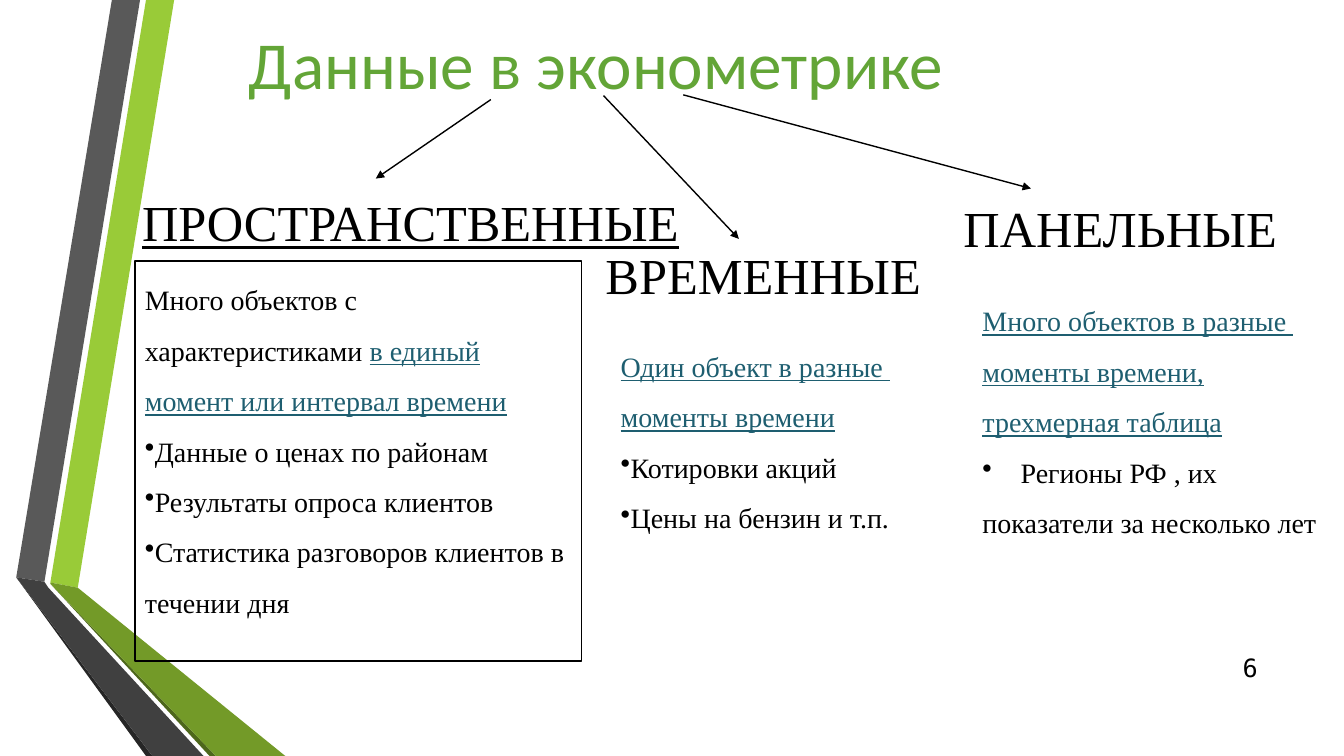
import pptx
import pptx.dml.color
import pptx.enum.shapes
import pptx.enum.text
import pptx.oxml
import pptx.oxml.ns
import pptx.util
from pptx.util import Cm

PP_ALIGN = pptx.enum.text.PP_ALIGN
ANCHOR = pptx.enum.text.MSO_ANCHOR
AUTO_SIZE = pptx.enum.text.MSO_AUTO_SIZE

BLACK = "000000"
HEADING = {"size": 36, "name": "Times New Roman", "color": BLACK}
BODY = {"size": 20, "name": "Times New Roman", "color": BLACK}
ACCENT = {**BODY, "color": "1E5E70", "underline": True}
TITLE = {"size": 48, "name": "Calibri", "color": "63A537"}
NUMBER = {"size": 18, "name": "DejaVu Sans Mono", "color": BLACK}

# Ribbon facets: fill and corner points in centimetres
RIBBONS = [
    ("99CB38", [(1.27, 14.68), (1.96, 14.81), (4.39, 0), (3.68, 0)]),
    ("595959", [(3.53, 0), (2.82, 0), (0.41, 14.55), (1.12, 14.66)]),
    ("262626", [(0.41, 14.55), (3.68, 19.05), (3.84, 19.05)]),
    ("4D671B", [(1.27, 14.71), (5.28, 19.05), (5.44, 19.05)]),
    ("739A28", [(1.27, 14.71), (5.44, 19.05), (7.19, 19.05), (1.96, 14.81), (1.27, 14.68)]),
    ("404040", [(5.13, 19.05), (1.22, 14.81), (1.12, 14.66), (0.41, 14.55), (3.84, 19.05)]),
]

ARROWS = [
    (12.37, 2.51, 9.47, 4.5),
    (15.21, 2.41, 18.62, 6.02),
    (17.22, 2.39, 25.98, 4.75),
]

HEADINGS = [
    ("ПРОСТРАНСТВЕННЫЕ", (3.33, 4.7, 14.17, 1.8), {**HEADING, "underline": True}),
    ("ВРЕМЕННЫЕ", (15.01, 6.02, 8.46, 1.8), HEADING),
    ("ПАНЕЛЬНЫЕ", (24.03, 4.85, 8.48, 1.8), HEADING),
]

# Each paragraph: runs, bullet flag, hanging indent in centimetres
SPATIAL = [
    ([("Много объектов с характеристиками ", BODY),
      ("в единый момент или интервал времени", ACCENT)], False, 0),
    ([("Данные о ценах по районам", BODY)], True, 0),
    ([("Результаты опроса клиентов", BODY)], True, 0),
    ([("Статистика разговоров клиентов в течении дня", BODY)], True, 0),
]
TEMPORAL = [
    ([("Один объект в разные ", ACCENT)], False, 0),
    ([("моменты времени", ACCENT)], False, 0),
    ([("Котировки акций", BODY)], True, 0),
    ([("Цены на бензин и т.п.", BODY)], True, 0),
]
PANEL = [
    ([("Много объектов в разные ", ACCENT)], False, 0),
    ([("моменты времени, трехмерная таблица", ACCENT)], False, 0),
    ([("Регионы РФ , их", BODY)], True, 0.96),
    ([("показатели за несколько лет", BODY)], False, 0),
]


def rgb(value):
    return pptx.dml.color.RGBColor.from_string(value)


def add_run(paragraph, text, style):
    run = paragraph.add_run()
    run.text = text
    for key, value in style.items():
        if key == "color":
            run.font.color.rgb = rgb(value)
        else:
            setattr(run.font, key, pptx.util.Pt(value) if key == "size" else value)


def add_bullet(paragraph, hanging):
    properties = paragraph._p.get_or_add_pPr()
    properties.set("marL", str(Cm(hanging)))
    properties.set("indent", str(-Cm(hanging)))
    bullet = pptx.oxml.parse_xml(
        f'<a:buChar {pptx.oxml.ns.nsdecls("a")} char="•"/>')
    properties.append(bullet)


def add_label(slide, text, box, style, alignment=PP_ALIGN.LEFT, **frame_format):
    shape = slide.shapes.add_textbox(*map(Cm, box))
    for key, value in frame_format.items():
        setattr(shape.text_frame, key, value)
    paragraph = shape.text_frame.paragraphs[0]
    paragraph.alignment = alignment
    add_run(paragraph, text, style)


def fill_body(shape, paragraphs):
    frame = shape.text_frame
    frame.word_wrap = True
    frame.vertical_anchor = ANCHOR.TOP
    for index, (runs, bulleted, hanging) in enumerate(paragraphs):
        paragraph = frame.add_paragraph() if index else frame.paragraphs[0]
        paragraph.alignment = PP_ALIGN.LEFT
        paragraph.line_spacing = 1.5
        if bulleted:
            add_bullet(paragraph, hanging)
        for text, style in runs:
            add_run(paragraph, text, style)


def add_framed_body(slide, box, paragraphs):
    shape = slide.shapes.add_shape(
        pptx.enum.shapes.MSO_SHAPE.RECTANGLE, *map(Cm, box))
    shape.shadow.inherit = False
    shape.fill.background()
    shape.line.color.rgb = rgb(BLACK)
    shape.line.width = pptx.util.Pt(1)
    fill_body(shape, paragraphs)


def add_ribbon(slide, color, points):
    corners = [(Cm(x), Cm(y)) for x, y in points]
    builder = slide.shapes.build_freeform(*corners[0])
    builder.add_line_segments(corners[1:], close=True)
    shape = builder.convert_to_shape()
    shape.shadow.inherit = False
    shape.fill.solid()
    shape.fill.fore_color.rgb = rgb(color)
    shape.line.fill.background()


def add_arrow(slide, ends):
    arrow = slide.shapes.add_connector(
        pptx.enum.shapes.MSO_CONNECTOR.STRAIGHT, *map(Cm, ends))
    arrow.line.color.rgb = rgb(BLACK)
    arrow.line.width = pptx.util.Pt(1)
    namespace = pptx.oxml.ns.nsdecls("a")
    arrow.line._get_or_add_ln().append(
        pptx.oxml.parse_xml(f'<a:tailEnd {namespace} type="triangle"/>'))
    arrow._element.spPr.append(pptx.oxml.parse_xml(f"<a:effectLst {namespace}/>"))


def main():
    presentation = pptx.Presentation()
    presentation.slide_width = Cm(33.87)
    presentation.slide_height = Cm(19.05)
    slide = presentation.slides.add_slide(presentation.slide_layouts[6])

    # Ribbon on the left edge
    for color, points in RIBBONS:
        add_ribbon(slide, color, points)

    # Title and slide number
    add_label(slide, "Данные в эконометрике", (4.45, 0.45, 21.16, 2.3), TITLE,
              PP_ALIGN.CENTER, word_wrap=True)
    add_label(slide, "6", (30.43, 16.31, 1.52, 1.02), NUMBER, PP_ALIGN.RIGHT,
              word_wrap=True, vertical_anchor=ANCHOR.MIDDLE)

    # Arrows from the title to the three kinds of data
    for ends in ARROWS:
        add_arrow(slide, ends)
    for text, box, style in HEADINGS:
        add_label(slide, text, box, style, word_wrap=False,
                  auto_size=AUTO_SIZE.SHAPE_TO_FIT_TEXT)

    # Descriptions
    add_framed_body(slide, (3.4, 6.58, 11.25, 10.08), SPATIAL)
    for box, paragraphs in [((15.39, 8.26, 8.1, 5.38), TEMPORAL),
                            ((24.51, 7.11, 9.1, 7.95), PANEL)]:
        fill_body(slide.shapes.add_textbox(*map(Cm, box)), paragraphs)

    presentation.save("out.pptx")


if __name__ == "__main__":
    main()
